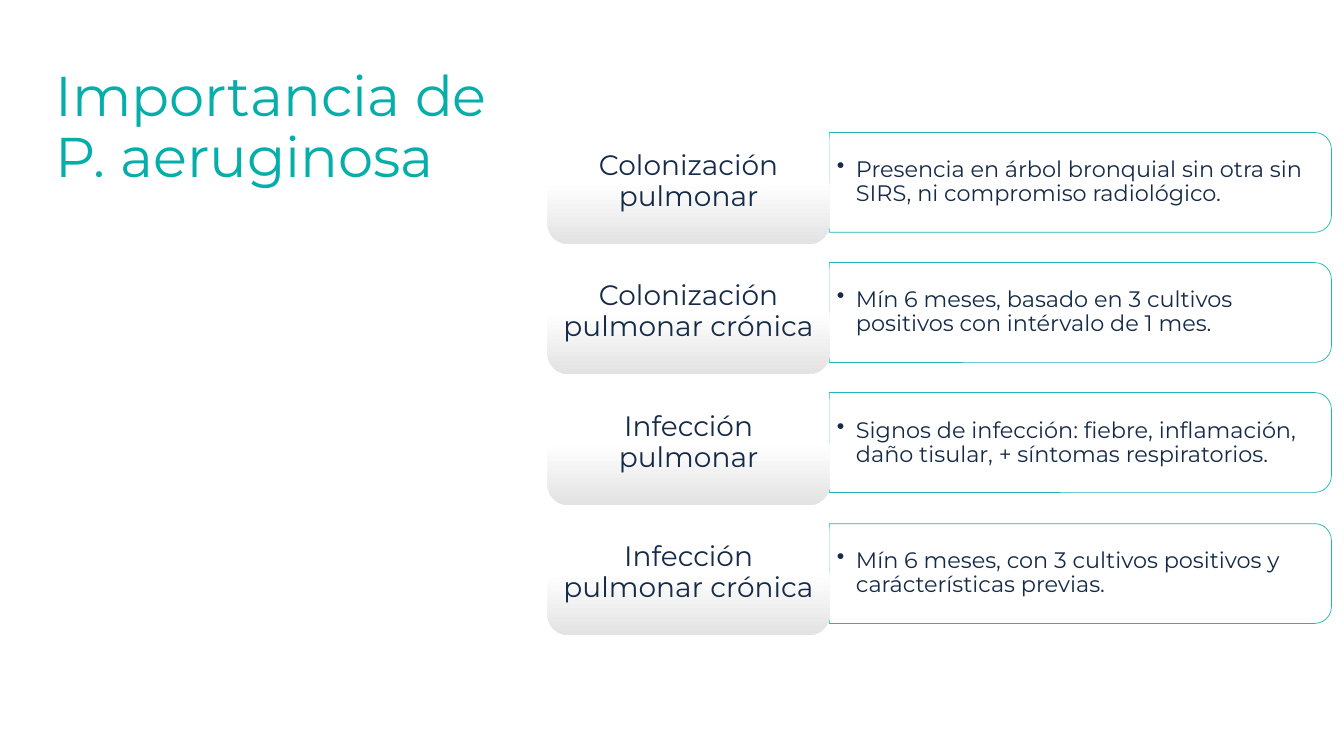
from copy import deepcopy
from dataclasses import dataclass

from lxml import etree
from pptx import Presentation
from pptx.dml.color import RGBColor
from pptx.enum.shapes import MSO_SHAPE
from pptx.enum.text import MSO_ANCHOR, PP_ALIGN
from pptx.oxml.ns import qn
from pptx.util import Emu, Pt

ROUND_RECT = MSO_SHAPE.ROUNDED_RECTANGLE
ROUND_TOP_RECT = MSO_SHAPE.ROUND_2_SAME_RECTANGLE
MIDDLE = MSO_ANCHOR.MIDDLE
LEFT, CENTER = PP_ALIGN.LEFT, PP_ALIGN.CENTER

EMU_PER_PX = 9144  # 100 px to the inch
FONT = "Montserrat"
TEAL, NAVY, WHITE, GREY = "06AEAA", "152B48", "FFFFFF", "E3E3E3"
LABEL_STOPS = ((0, WHITE), (0.5, WHITE), (1, GREY))

FIRST_TOP, ROW_PITCH = 119, 129.4
LABEL_LEFT, LABEL_WIDTH, LABEL_HEIGHT = 543, 280, 123
PANEL_LEFT, PANEL_WIDTH, PANEL_HEIGHT = 823, 498, 99
DETAIL_WIDTH, DETAIL_HEIGHT = 493, 89
BULLET_INDENT = 19


@dataclass(frozen=True)
class Definition:
    label: str
    detail: str


@dataclass(frozen=True)
class TextStyle:
    size: int
    color: str
    align: PP_ALIGN
    inset_x: int
    inset_y: int
    bullet: bool = False


TITLE_STYLE = TextStyle(40, TEAL, LEFT, 10, 5)
LABEL_STYLE = TextStyle(20, NAVY, CENTER, 8, 4)
DETAIL_STYLE = TextStyle(16, NAVY, LEFT, 7, 3, bullet=True)

DEFINITIONS = (
    Definition("Colonización pulmonar",
               "Presencia en árbol bronquial sin otra sin SIRS, ni compromiso radiológico."),
    Definition("Colonización pulmonar crónica",
               "Mín 6 meses, basado en 3 cultivos positivos con intérvalo de 1 mes."),
    Definition("Infección pulmonar",
               "Signos de infección: fiebre, inflamación, daño tisular, + síntomas respiratorios."),
    Definition("Infección pulmonar crónica",
               "Mín 6 meses, con 3 cultivos positivos y carácterísticas previas."),
)


def px(length: float) -> Emu:
    return Emu(round(length) * EMU_PER_PX)


def rgb(color: str) -> RGBColor:
    return RGBColor.from_string(color)


def set_values(target, values: dict) -> None:
    for name, value in values.items():
        setattr(target, name, value)


def write_text(box, text: str, style: TextStyle) -> None:
    frame = box.text_frame
    set_values(frame, {
        "word_wrap": True, "vertical_anchor": MIDDLE,
        "margin_left": px(style.inset_x), "margin_right": px(style.inset_x),
        "margin_top": px(style.inset_y), "margin_bottom": px(style.inset_y),
    })
    para = frame.paragraphs[0]
    if style.bullet:
        properties = para._p.get_or_add_pPr()
        properties.set("marL", str(px(BULLET_INDENT)))
        properties.set("indent", str(-px(BULLET_INDENT)))
        etree.SubElement(properties, qn("a:buChar")).set("char", "•")
    set_values(para, {"alignment": style.align, "line_spacing": 0.9})
    span = para.add_run()
    span.text = text
    set_values(span.font, {"name": FONT, "size": Pt(style.size)})
    span.font.color.rgb = rgb(style.color)


def add_text(page, left: int, top: float, width: int, height: int,
             text: str, style: TextStyle) -> None:
    box = page.shapes.add_textbox(px(left), px(top), px(width), px(height))
    write_text(box, text, style)


def add_panel(page, middle: float) -> None:
    """Draw the outlined panel, turned so that its round corners face right."""
    center = PANEL_LEFT + PANEL_WIDTH / 2
    panel = page.shapes.add_shape(
        ROUND_TOP_RECT, px(center - PANEL_HEIGHT / 2), px(middle - PANEL_WIDTH / 2),
        px(PANEL_HEIGHT), px(PANEL_WIDTH))
    panel.rotation = 90
    panel.shadow.inherit = False
    panel.fill.solid()
    panel.fill.fore_color.rgb = rgb(WHITE)
    panel.line.color.rgb = rgb(TEAL)
    panel.line.width = Pt(0.5)
    for color in panel._element.spPr.iter(qn("a:srgbClr")):
        etree.SubElement(color, qn("a:alpha")).set("val", "90000")


def add_label(page, top: float, text: str) -> None:
    label = page.shapes.add_shape(
        ROUND_RECT, px(LABEL_LEFT), px(top), px(LABEL_WIDTH), px(LABEL_HEIGHT))
    label.shadow.inherit = False
    label.line.fill.background()
    label.fill.gradient()
    label.fill.gradient_angle = 270
    stop_list = next(label._element.spPr.iter(qn("a:gsLst")))
    stop_list.append(deepcopy(stop_list[0]))
    for stop, (position, color) in zip(label.fill.gradient_stops, LABEL_STOPS):
        stop.position = position
        stop.color.rgb = rgb(color)
    write_text(label, text, LABEL_STYLE)


def main() -> None:
    deck = Presentation()
    set_values(deck, {"slide_width": px(1333), "slide_height": px(750)})
    page = deck.slides.add_slide(deck.slide_layouts[6])
    for row, definition in enumerate(DEFINITIONS):
        top = FIRST_TOP + row * ROW_PITCH
        middle = top + LABEL_HEIGHT / 2
        add_panel(page, middle)
        add_text(page, PANEL_LEFT, middle - DETAIL_HEIGHT / 2, DETAIL_WIDTH,
                 DETAIL_HEIGHT, definition.detail, DETAIL_STYLE)
        add_label(page, top, definition.label)
    add_text(page, 45, 12, 466, 232, "Importancia de P. aeruginosa", TITLE_STYLE)
    deck.save("out.pptx")


if __name__ == "__main__":
    main()
